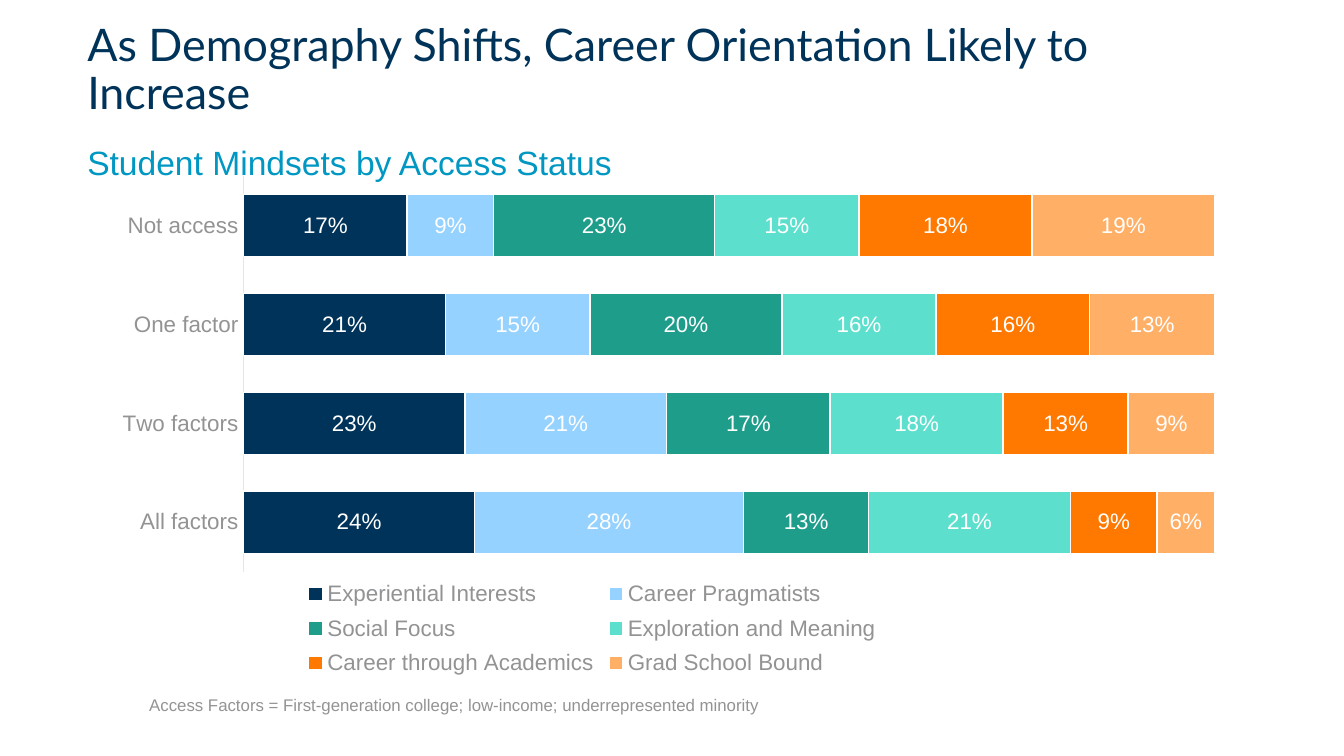
from lxml.etree import SubElement
from pptx import Presentation
from pptx.chart.data import CategoryChartData
from pptx.dml.color import RGBColor
from pptx.enum.chart import XL_CHART_TYPE, XL_LEGEND_POSITION, XL_TICK_LABEL_POSITION, XL_TICK_MARK
from pptx.enum.text import MSO_ANCHOR
from pptx.oxml import parse_xml
from pptx.oxml.ns import nsdecls, qn
from pptx.util import Cm, Pt

NAVY = RGBColor(0x00, 0x33, 0x59)
SKY = RGBColor(0x96, 0xD2, 0xFF)
TEAL = RGBColor(0x1E, 0x9D, 0x8B)
MINT = RGBColor(0x5C, 0xE0, 0xCD)
ORANGE = RGBColor(0xFF, 0x79, 0x00)
PEACH = RGBColor(0xFF, 0xAF, 0x66)
CYAN = RGBColor(0x00, 0x98, 0xC3)
GRAY = RGBColor(0x92, 0x93, 0x95)
DARK_GRAY = RGBColor(0x58, 0x59, 0x5B)
PALE_GRAY = RGBColor(0xE6, 0xE6, 0xE7)
WHITE = RGBColor(0xFF, 0xFF, 0xFF)

ACCESS_GROUPS = ["Not access", "One factor", "Two factors", "All factors"]
MINDSETS = [
    ("Experiential Interests", NAVY, (0.17, 0.21, 0.23, 0.24)),
    ("Career Pragmatists", SKY, (0.09, 0.15, 0.21, 0.28)),
    ("Social Focus", TEAL, (0.23, 0.20, 0.17, 0.13)),
    ("Exploration and Meaning", MINT, (0.15, 0.16, 0.18, 0.21)),
    ("Career through Academics", ORANGE, (0.18, 0.16, 0.13, 0.09)),
    ("Grad School Bound", PEACH, (0.19, 0.13, 0.09, 0.06)),
]


def set_font(font, size, color, name="Arial"):
    """Set the size, colour and typeface of a font."""
    font.size = Pt(size)
    font.name = name
    font.color.rgb = color


def add_text(page, box, text, size, color, name="Arial", anchor=MSO_ANCHOR.TOP,
             inset=Cm(0.25), line_spacing=0.9):
    """Place one paragraph of text in the given box."""
    frame = page.shapes.add_textbox(*box).text_frame
    frame.word_wrap = True
    frame.vertical_anchor = anchor
    frame.margin_left = frame.margin_right = inset
    frame.margin_top = frame.margin_bottom = min(inset, Cm(0.25))
    para = frame.paragraphs[0]
    para.text = text
    para.line_spacing = line_spacing
    set_font(para.font, size, color, name)


def set_layout(parent, index, fractions, inner=False):
    """Fix a chart part at left, top, width and height fractions of the chart."""
    for old in parent.findall(qn("c:layout")):
        parent.remove(old)
    layout = parse_xml(f"<c:layout {nsdecls('c')}/>")
    manual = SubElement(layout, qn("c:manualLayout"))
    if inner:
        SubElement(manual, qn("c:layoutTarget")).set("val", "inner")
    for side in ("xMode", "yMode"):
        SubElement(manual, qn(f"c:{side}")).set("val", "edge")
    for side, fraction in zip("xywh", fractions):
        SubElement(manual, qn(f"c:{side}")).set("val", str(fraction))
    parent.insert(index, layout)


def style_axes(chart):
    """Show the groups from top to bottom and hide the value axis."""
    groups = chart.category_axis
    groups.reverse_order = True
    groups.has_major_gridlines = False
    groups.major_tick_mark = groups.minor_tick_mark = XL_TICK_MARK.NONE
    groups.tick_label_position = XL_TICK_LABEL_POSITION.NEXT_TO_AXIS
    set_font(groups.tick_labels.font, 12, GRAY)
    groups.format.line.color.rgb = PALE_GRAY
    groups.format.line.width = Pt(0.75)
    shares = chart.value_axis
    shares.has_major_gridlines = False
    shares.visible = False


def style_series(series, color):
    """Fill one mindset's bars and label them with their shares."""
    series.format.fill.solid()
    series.format.fill.fore_color.rgb = color
    series.format.line.color.rgb = WHITE
    series.format.line.width = Pt(0.75)
    labels = series.data_labels
    labels.show_value = True
    labels.number_format = "0%"
    labels.number_format_is_linked = False
    set_font(labels.font, 12, WHITE)


def add_mindset_chart(page, box):
    """Place the stacked bars of mindsets by access status."""
    data = CategoryChartData(number_format="0%")
    data.categories = ACCESS_GROUPS
    for name, _, shares in MINDSETS:
        data.add_series(name, shares)
    chart = page.shapes.add_chart(XL_CHART_TYPE.BAR_STACKED_100, *box, data).chart
    set_font(chart.font, 12, DARK_GRAY)
    chart.has_title = False
    plot = chart.plots[0]
    plot.gap_width = 59
    plot.overlap = 100
    plot.vary_by_categories = False
    for series, (_, color, _) in zip(plot.series, MINDSETS):
        style_series(series, color)
    style_axes(chart)
    chart.has_legend = True
    legend = chart.legend
    legend.position = XL_LEGEND_POSITION.BOTTOM
    legend.include_in_layout = False
    set_font(legend.font, 12, GRAY)
    legend_element = chart.element.find(f".//{qn('c:legend')}")
    set_layout(legend_element, 1, (0.18, 0.76, 0.51, 0.21))
    plot_area = chart.element.find(f".//{qn('c:plotArea')}")
    set_layout(plot_area, 0, (0.13, 0.03, 0.85, 0.73), inner=True)


def main():
    """Build and save the deck."""
    deck = Presentation()
    deck.slide_width, deck.slide_height = Cm(25.4), Cm(14.28)
    page = deck.slides.add_slide(deck.slide_layouts[6])
    add_text(page, (Cm(1.4), Cm(0.43), Cm(20.04), Cm(2.08)),
             "As Demography Shifts, Career Orientation Likely to Increase",
             24, NAVY, "Lato", MSO_ANCHOR.BOTTOM)
    add_text(page, (Cm(1.4), Cm(2.51), Cm(16.18), Cm(1)),
             "Student Mindsets by Access Status", 18, CYAN)
    add_mindset_chart(page, (Cm(1.8), Cm(3.02), Cm(21.59), Cm(10.24)))
    add_text(page, (Cm(2.69), Cm(13), Cm(12.32), Cm(0.64)),
             "Access Factors = First-generation college; low-income; underrepresented minority",
             9, GRAY, inset=Cm(0.13), line_spacing=1)
    deck.save("out.pptx")


if __name__ == "__main__":
    main()
